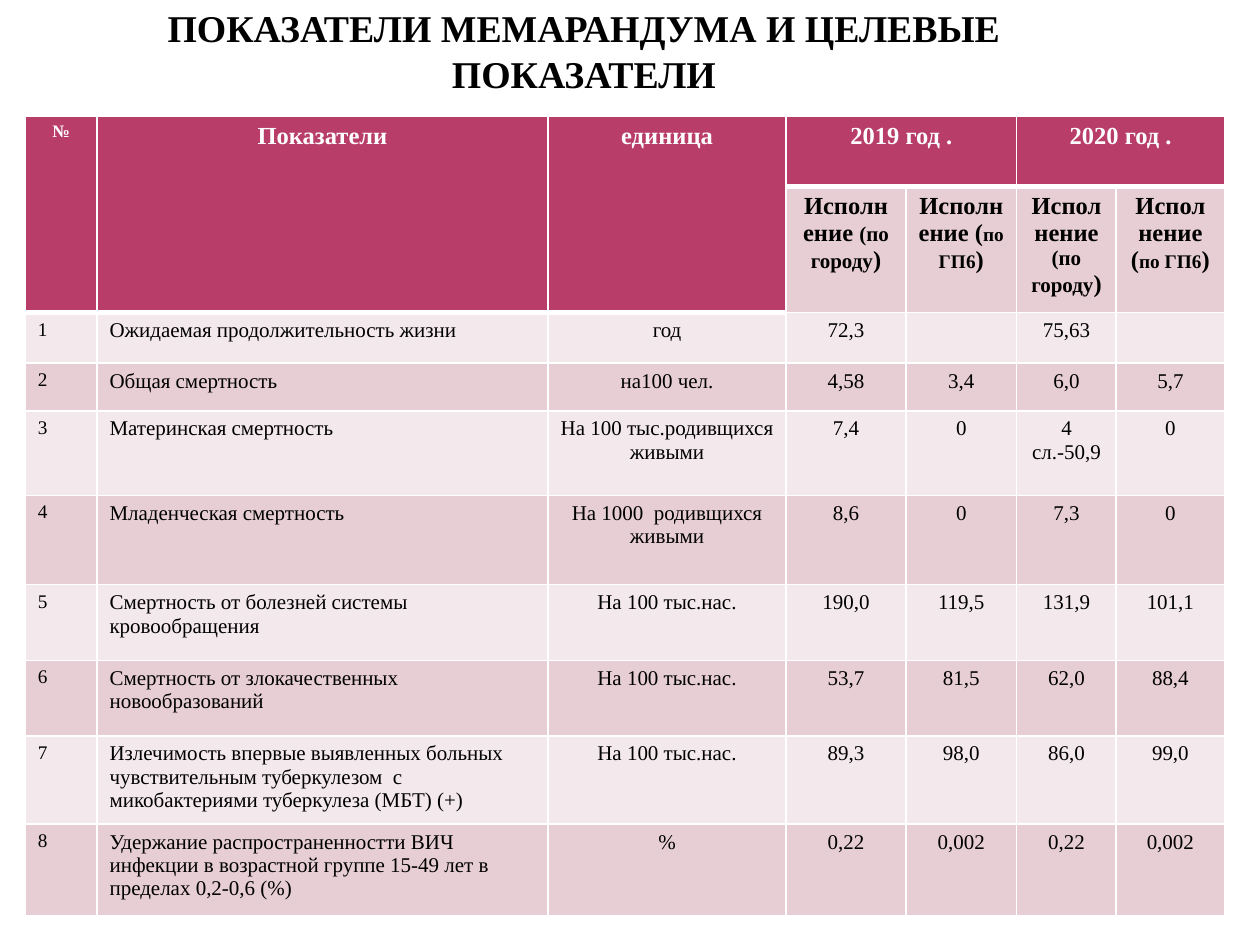
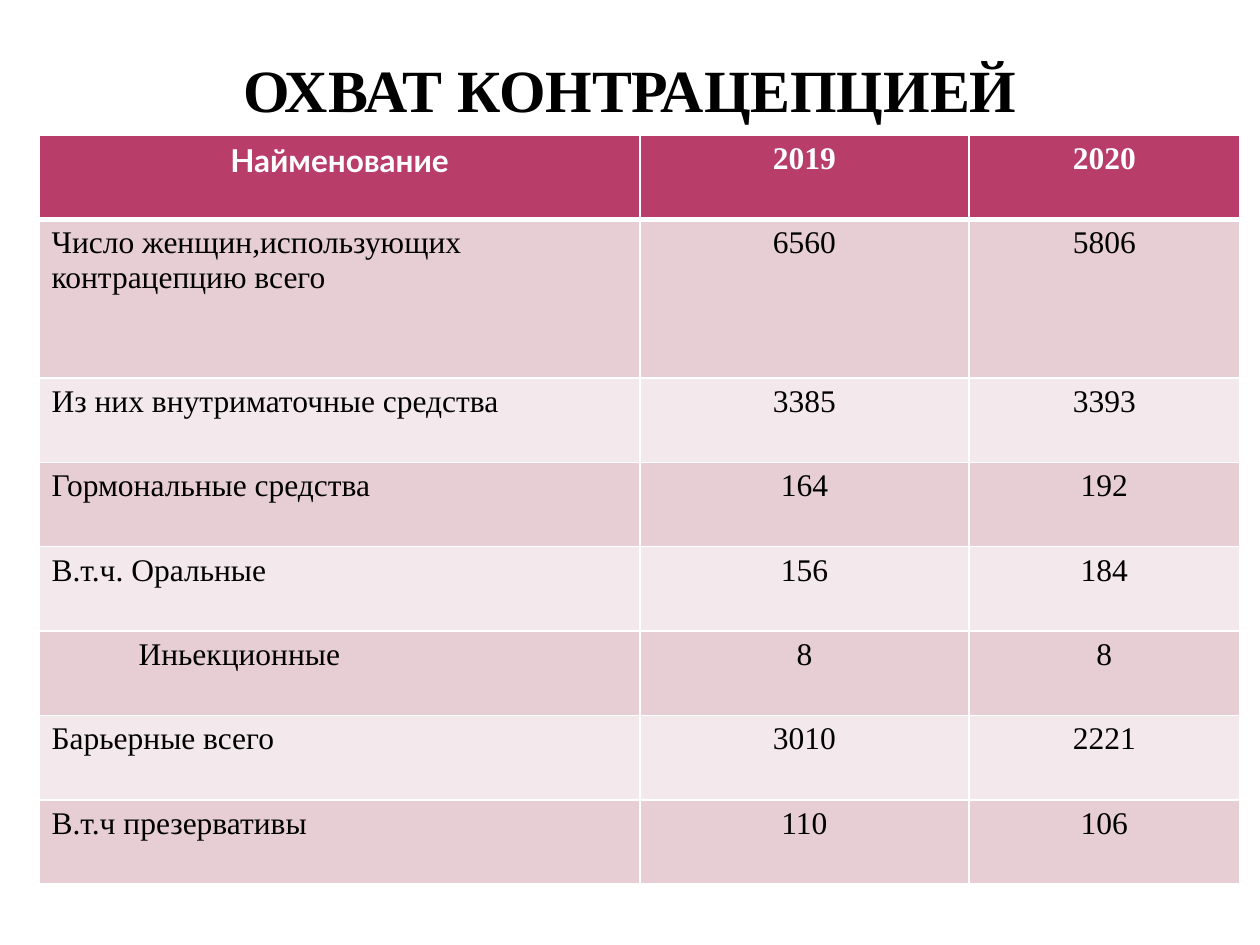
import pptx
import pptx.dml.color
import pptx.enum.text
import pptx.oxml
import pptx.oxml.ns
import pptx.util

Inches = pptx.util.Inches
Pt = pptx.util.Pt
RGBColor = pptx.dml.color.RGBColor
Align = pptx.enum.text.PP_ALIGN

BLACK = RGBColor(0x00, 0x00, 0x00)
WHITE = RGBColor(0xFF, 0xFF, 0xFF)
BERRY = RGBColor(0xB8, 0x3D, 0x68)
ROSE = RGBColor(0xE6, 0xCE, 0xD4)
PALE = RGBColor(0xF3, 0xE8, 0xEB)
SERIF = "Times New Roman"

CITY = [("Исполнение ", 14), ("(по городу", 12), (")", 14)]
CLINIC = [("Исполнение (", 14), ("по ГП6", 11), (")", 14)]

GOALS = [
    ["№", "Показатели", "единица", "2019 год .", "", "2020 год .", ""],
    ["", "", "", CITY, CLINIC, CITY, CLINIC],
    ["1", "Ожидаемая продолжительность жизни", "год", "72,3", "", "75,63", ""],
    ["2", "Общая смертность", "на100 чел.", "4,58", "3,4", "6,0", "5,7"],
    ["3", "Материнская смертность", "На 100 тыс.родивщихся живыми",
     "7,4", "0", "4 сл.-50,9", "0"],
    ["4", "Младенческая смертность", "На 1000  родивщихся живыми",
     "8,6", "0", "7,3", "0"],
    ["5", "Смертность от болезней системы кровообращения", "На 100 тыс.нас.",
     "190,0", "119,5", "131,9", "101,1"],
    ["6", "Смертность от злокачественных новообразований", "На 100 тыс.нас.",
     "53,7", "81,5", "62,0", "88,4"],
    ["7", "Излечимость впервые выявленных больных чувствительным туберкулезом  с "
     "микобактериями туберкулеза (МБТ) (+)", "На 100 тыс.нас.",
     "89,3", "98,0", "86,0", "99,0"],
    ["8", "Удержание распространенностти ВИЧ инфекции в возрастной группе "
     "15-49 лет в пределах 0,2-0,6 (%)", "%", "0,22", "0,002", "0,22", "0,002"],
]

COVER = [
    ["Найменование", "2019", "2020"],
    ["Число женщин,использующих контрацепцию всего", "6560", "5806"],
    ["Из них внутриматочные средства", "3385", "3393"],
    ["Гормональные средства", "164", "192"],
    ["В.т.ч. Оральные", "156", "184"],
    ["Иньекционные", "8", "8"],
    ["Барьерные всего", "3010", "2221"],
    ["В.т.ч презервативы", "110", "106"],
]


def style(run, size, color, bold):
    """Format one run in the shared serif face."""
    font = run.font
    font.name, font.size, font.bold = SERIF, Pt(size), bold
    font.color.rgb = color


def add_title(slide, text, box, size):
    """Add a bold centred title that rests on the bottom of its box."""
    frame = slide.shapes.add_textbox(*map(Inches, box)).text_frame
    frame.word_wrap = True
    frame.vertical_anchor = pptx.enum.text.MSO_ANCHOR.BOTTOM
    frame.margin_left = frame.margin_right = Inches(0.05)
    frame.margin_top = frame.margin_bottom = 0
    frame.text = text
    para = frame.paragraphs[0]
    para.alignment = Align.CENTER
    style(para.runs[0], size, BLACK, True)


def edge(cell, top, bottom):
    """Draw white borders, with top and bottom widths in points."""
    props = cell._tc.get_or_add_tcPr()
    sides = [("L", 1), ("R", 1), ("T", top), ("B", bottom)]
    for spot, (side, width) in enumerate(sides):
        props.insert(spot, pptx.oxml.parse_xml(
            f'<a:ln{side} {pptx.oxml.ns.nsdecls("a")} w="{Pt(width)}">'
            f'<a:solidFill><a:srgbClr val="{WHITE}"/></a:solidFill></a:ln{side}>'))


def fill_cell(cell, text, size, color, bold, align):
    """Write plain text, or a list of sized parts, into a cell."""
    para = cell.text_frame.paragraphs[0]
    para.alignment = align
    parts = [(text, size)] if isinstance(text, str) else text
    for part, points in parts:
        if part:
            run = para.add_run()
            run.text = part
            style(run, points, color, bold)


def add_grid(slide, data, spot, cols, rows, sizes, left, merges=()):
    """Add a banded table; left columns align left and merges join header cells."""
    frame = slide.shapes.add_table(len(rows), len(cols), *map(
        Inches, (*spot, sum(cols), sum(rows))))
    grid = frame.table
    grid.first_row = grid.horz_banding = False
    for col, width in zip(grid.columns, cols):
        col.width = Inches(width)
    for row, height in zip(grid.rows, rows):
        row.height = Inches(height)
    heads = {(0, c) for c in range(len(cols))}
    for start, end in merges:
        grid.cell(*start).merge(grid.cell(*end))
        heads.add((end[0], start[1]))
    subs = 1 if merges else 0
    for r, line in enumerate(data):
        for c, text in enumerate(line):
            cell = grid.cell(r, c)
            head = (r, c) in heads
            cell.fill.solid()
            cell.fill.fore_color.rgb = BERRY if head else ROSE if r % 2 else PALE
            edge(cell, 3 if (r - 1, c) in heads else 1, 3 if head else 1)
            fill_cell(cell, text, sizes[0 if r == 0 else 1][c],
                      WHITE if head else BLACK, r <= subs,
                      Align.LEFT if r > subs and c in left else Align.CENTER)
    return grid


def add_goals(slide):
    """Build the slide of memorandum targets."""
    add_title(slide, "ПОКАЗАТЕЛИ МЕМАРАНДУМА И ЦЕЛЕВЫЕ ПОКАЗАТЕЛИ",
              (0.55, 0.21, 8.17, 0.55), 21.6)
    merges = [((0, c), (1, c)) for c in range(3)]
    merges += [((0, c), (0, c + 1)) for c in (3, 5)]
    add_grid(slide, GOALS, (0.2, 0.92),
             [0.57, 3.58, 1.89, 0.95, 0.88, 0.79, 0.86],
             [0.56, 0.56, 0.38, 0.38, 0.67, 0.71, 0.6, 0.6, 0.67, 0.73],
             ([10] + [14] * 6, [11] + [12] * 6), (0, 1), merges)


def add_cover(slide):
    """Build the slide of contraception coverage."""
    add_title(slide, "ОХВАТ КОНТРАЦЕПЦИЕЙ", (0.5, 0.39, 9, 0.6), 34.2)
    grid = add_grid(slide, COVER, (0.31, 1.07), [4.77, 2.61, 2.15],
                    [0.67, 1.26] + [0.67] * 6, ([18] * 3, [18] * 3), (0,))
    grid.cell(0, 0).text_frame.paragraphs[0].runs[0].font.name = "Lato"
    inset = grid.cell(5, 0).text_frame.paragraphs[0]
    inset._p.get_or_add_pPr().set("marL", str(Inches(0.69)))


def main():
    """Build and save both slides."""
    deck = pptx.Presentation()
    deck.slide_width, deck.slide_height = Inches(10), Inches(7.5)
    for build in (add_goals, add_cover):
        build(deck.slides.add_slide(deck.slide_layouts[6]))
    deck.save("out.pptx")


if __name__ == "__main__":
    main()
